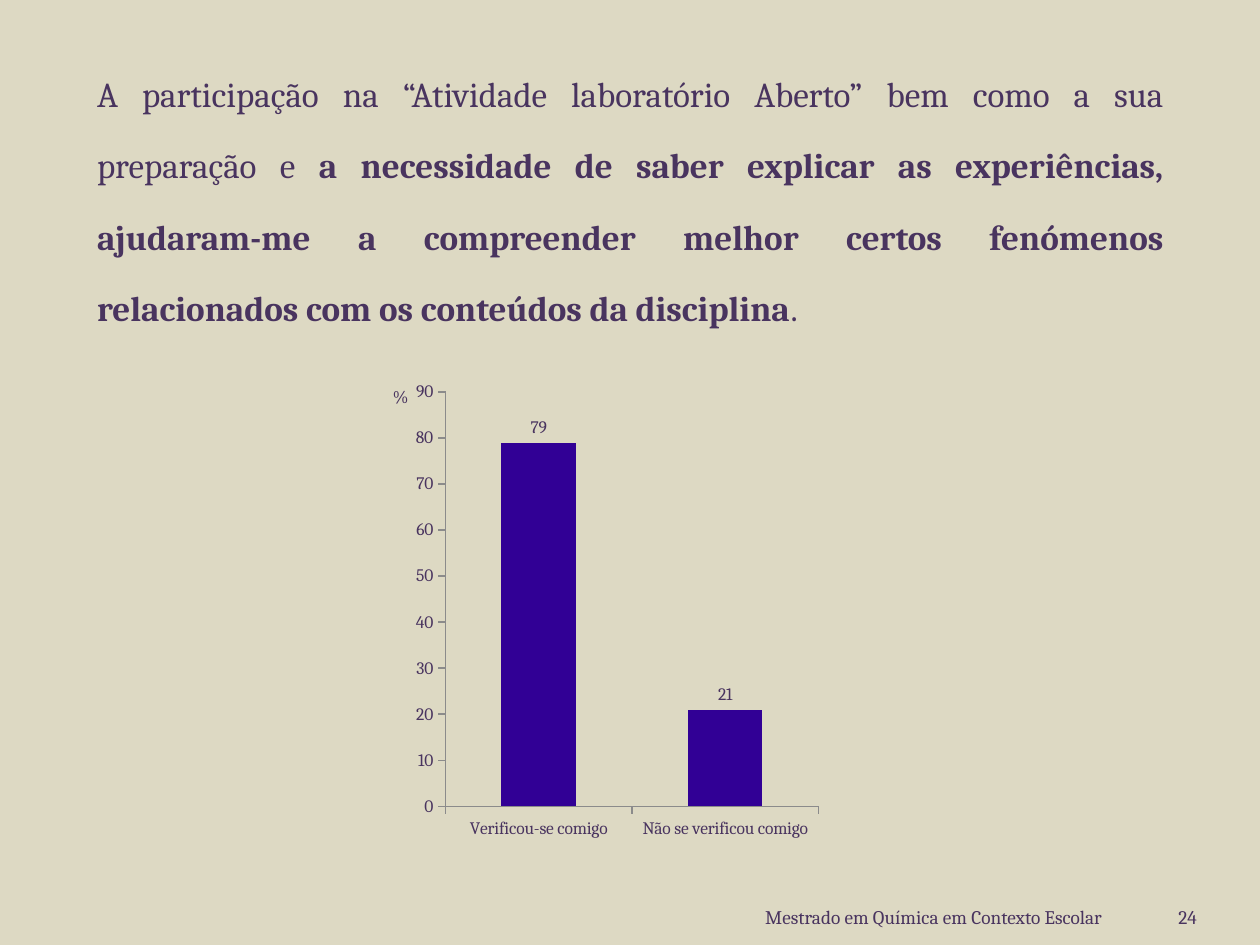
from lxml.etree import SubElement
from pptx import Presentation
from pptx.chart.data import CategoryChartData
from pptx.dml.color import RGBColor
from pptx.enum.chart import XL_CHART_TYPE, XL_LABEL_POSITION, XL_TICK_MARK
from pptx.enum.text import MSO_ANCHOR, PP_ALIGN
from pptx.oxml import parse_xml
from pptx.oxml.ns import nsdecls, qn
from pptx.util import Inches, Pt

# Content
BODY = [
    ("A participação na “Atividade laboratório Aberto” bem como a sua preparação e ", False),
    ("a necessidade de saber explicar as experiências, ajudaram-me a compreender "
     "melhor certos fenómenos relacionados com os conteúdos da disciplina", True),
    (".", False),
]
FOOT = [("Mestrado em Química em Contexto Escolar", 4.75, 4), ("24", 8.83, 0.67)]
CATS = ["Verificou-se comigo", "Não se verificou comigo"]
VALS = [79, 21]
BACK, INK, BAR, AXIS = "DDD9C3", "49345F", "310095", "8B8B8B"
PLOT = {"x": 0.18, "y": 0.04, "w": 0.8, "h": 0.87}
UNIT = {"x": 0.06, "y": 0.02}


def color(code):
    return RGBColor.from_string(code)


def style(font, size, bold=False):
    for name, value in {"name": "Cambria", "size": Pt(size), "bold": bold}.items():
        setattr(font, name, value)
    font.color.rgb = color(INK)


def place(shape, *box):
    for name, value in zip(("left", "top", "width", "height"), box):
        setattr(shape, name, Inches(value))


def layout(shares, inner=False):
    """Manual chart layout, given as shares of the chart's size."""
    node = parse_xml(f"<c:layout {nsdecls('c')}><c:manualLayout/></c:layout>")
    parts = {"layoutTarget": "inner"} if inner else {}
    parts.update({"xMode": "edge", "yMode": "edge"}, **shares)
    for tag, value in parts.items():
        SubElement(node[0], qn(f"c:{tag}")).set("val", str(value))
    return node


deck = Presentation()
deck.slide_width, deck.slide_height = Inches(10), Inches(7.5)
slide = deck.slides.add_slide(deck.slide_layouts[0])
slide.background.fill.solid()
slide.background.fill.fore_color.rgb = color(BACK)
title = slide.shapes.title.element
title.getparent().remove(title)

# Statement
body = slide.placeholders[1]
place(body, 0.67, 0.29, 8.67, 2.44)
body.text_frame.vertical_anchor = MSO_ANCHOR.TOP
para = body.text_frame.paragraphs[0]
para.alignment = PP_ALIGN.JUSTIFY
para.line_spacing, para.space_before = 1.7, Pt(15)
for text, bold in BODY:
    run = para.add_run()
    run.text = text
    style(run.font, 20, bold)

# Footer and page number
for text, left, width in FOOT:
    box = slide.shapes.add_textbox(0, 0, 0, 0)
    place(box, left, 7.15, width, 0.25)
    frame = box.text_frame
    frame.word_wrap = True
    frame.vertical_anchor = MSO_ANCHOR.MIDDLE
    frame.margin_right = 0
    frame.text = text
    frame.paragraphs[0].alignment = PP_ALIGN.RIGHT
    style(frame.paragraphs[0].runs[0].font, 11)

# Chart
data = CategoryChartData()
data.categories = CATS
data.add_series("Series 1", VALS)
chart = slide.shapes.add_chart(
    XL_CHART_TYPE.COLUMN_CLUSTERED,
    *map(Inches, (2.87, 2.96, 3.7, 3.78)), data).chart
style(chart.font, 10)
chart.has_legend = chart.has_title = False
area = chart.plots[0]
area.gap_width, area.vary_by_categories = 150, False
fill = area.series[0].format.fill
fill.solid()
fill.fore_color.rgb = color(BAR)
labels = area.series[0].data_labels
labels.show_value = True
labels.position = XL_LABEL_POSITION.OUTSIDE_END
style(labels.font, 10)

# Axes and unit
for axis in (chart.category_axis, chart.value_axis):
    axis.has_major_gridlines = False
    axis.major_tick_mark = XL_TICK_MARK.OUTSIDE
    axis.format.line.color.rgb = color(AXIS)
    axis.format.line.width = Pt(0.75)
    style(axis.tick_labels.font, 10)
scale = chart.value_axis
scale.minimum_scale, scale.maximum_scale, scale.major_unit = 0, 90, 10
unit = scale.axis_title
unit.text_frame.text = "%"
style(unit.text_frame.paragraphs[0].runs[0].font, 10)
turn = unit.text_frame._txBody.find(qn("a:bodyPr"))
turn.set("rot", "0")
turn.set("vert", "horz")

# Manual positions of unit and plot area
for node, shares, inner in (
        (unit._element, UNIT, False),
        (chart._chartSpace.chart.plotArea, PLOT, True)):
    for old in node.findall(qn("c:layout")):
        node.remove(old)
    node.insert(0 if inner else 1, layout(shares, inner))

deck.save("out.pptx")
